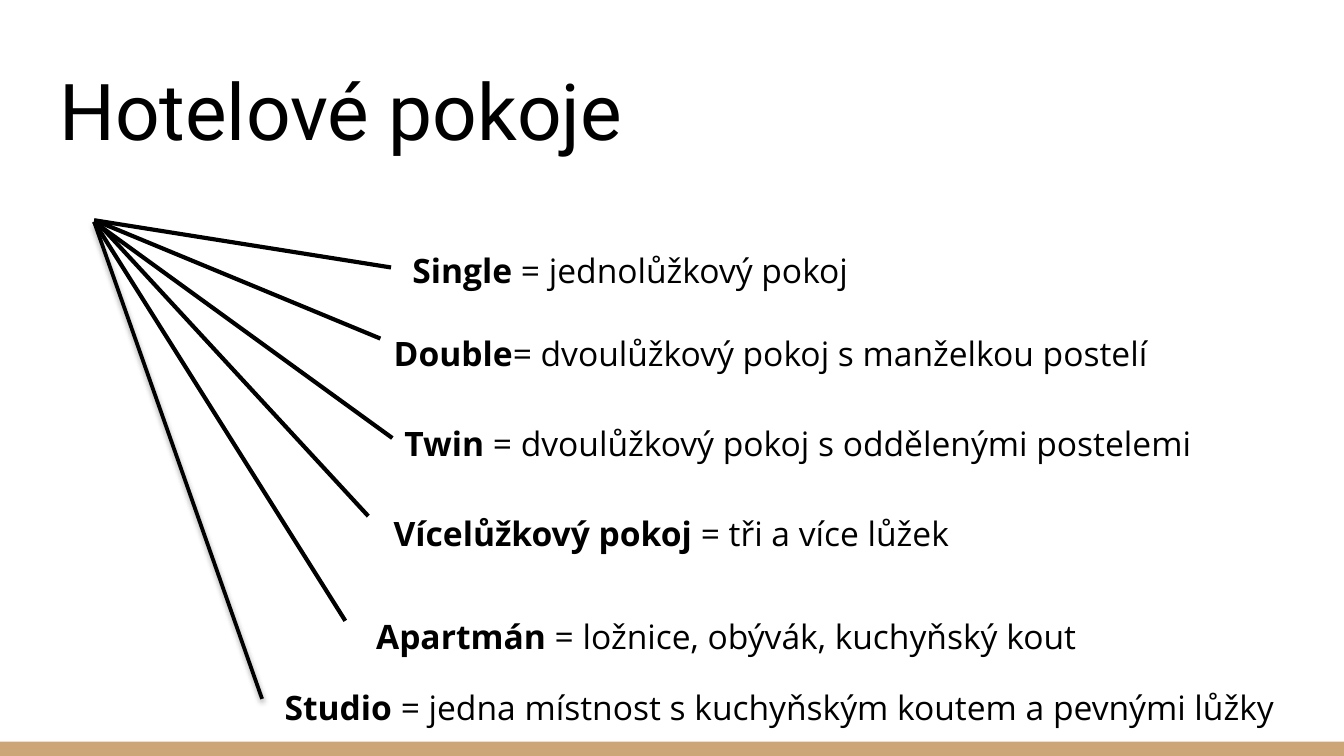
"""Build a slide that fans out from one point to the types of hotel rooms."""
from lxml.etree import SubElement
from pptx import Presentation
from pptx.dml.color import RGBColor
from pptx.enum.shapes import MSO_CONNECTOR, MSO_SHAPE
from pptx.enum.text import MSO_ANCHOR, MSO_AUTO_SIZE, PP_ALIGN
from pptx.oxml.ns import qn
from pptx.util import Pt


def rgb(value):
    return RGBColor.from_string(value)


class RoomSlide:
    INK = "000000"
    SAND = "CCA677"
    TITLE_FONT = "Roboto"
    BODY_FONT = "Open Sans"
    INSET = 7.2

    def __init__(self, prs):
        self.s = prs.slides.add_slide(prs.slide_layouts[5])
        fill = self.s.background.fill
        fill.solid()
        fill.fore_color.rgb = rgb("FFFFFF")

    def place(self, sp, left, top, width, height):
        sp.left, sp.top = Pt(left), Pt(top)
        sp.width, sp.height = Pt(width), Pt(height)

    def frame(self, sp, inset_y=INSET):
        tf = sp.text_frame
        tf.word_wrap = True
        tf.auto_size = MSO_AUTO_SIZE.NONE
        tf.margin_left = tf.margin_right = Pt(self.INSET)
        tf.margin_top = tf.margin_bottom = Pt(inset_y)
        return tf

    def run(self, p, text, font, size, bold=False):
        r = p.add_run()
        r.text = text
        r.font.name = font
        r.font.size = Pt(size)
        r.font.bold = bold
        r.font.color.rgb = rgb(self.INK)

    def bar(self, left, top, width, height):
        sp = self.s.shapes.add_shape(
            MSO_SHAPE.RECTANGLE, Pt(left), Pt(top), Pt(width), Pt(height))
        sp.shadow.inherit = False
        sp.fill.solid()
        sp.fill.fore_color.rgb = rgb(self.SAND)
        sp.line.fill.background()

    def title(self, text, *box):
        sp = self.s.shapes.title
        self.place(sp, *box)
        tf = self.frame(sp)
        tf.vertical_anchor = MSO_ANCHOR.BOTTOM
        p = tf.paragraphs[0]
        p.alignment = PP_ALIGN.LEFT
        self.run(p, text, self.TITLE_FONT, 42)

    def ray(self, start, end, weight=2.25, shadow=False):
        sp = self.s.shapes.add_connector(
            MSO_CONNECTOR.STRAIGHT, *(Pt(v) for v in (*start, *end)))
        sp.line.color.rgb = rgb(self.INK)
        sp.line.width = Pt(weight)
        effects = SubElement(sp._element.spPr, qn("a:effectLst"))
        if shadow:
            outer = SubElement(
                effects, qn("a:outerShdw"), blurRad=str(Pt(3.1)),
                dist=str(Pt(1.6)), dir="5400000", rotWithShape="0")
            color = SubElement(outer, qn("a:srgbClr"), val=self.INK)
            SubElement(color, qn("a:alpha"), val="38000")

    def room(self, name, meaning, box, inset_y=INSET, spacing=None):
        sp = self.s.shapes.add_textbox(*(Pt(v) for v in box))
        p = self.frame(sp, inset_y).paragraphs[0]
        p.line_spacing = spacing
        self.run(p, name, self.BODY_FONT, 18, True)
        self.run(p, meaning, self.BODY_FONT, 18)


ROOMS = [
    ("Single ", "= jednolůžkový pokoj",
     (50.4, 118), (209.5, 143.3), (213.8, 126.7, 349.2, 71.3), {}, {}),
    ("Double", "= dvoulůžkový pokoj s manželkou postelí",
     (52.6, 118.8), (203.8, 181.4), (203.8, 167.8, 502.6, 51.8), {}, {"spacing": 1.15}),
    ("Twin", " = dvoulůžkový pokoj s oddělenými postelemi",
     (50.4, 118.8), (210.2, 234.7), (209.5, 219.6, 502.6, 58.3), {}, {}),
    ("Vícelůžkový pokoj", " = tři a více lůžek",
     (51.8, 118.8), (197.3, 276.5), (203.8, 267.8, 478.8, 39.6), {}, {}),
    ("Apartmán", " = ložnice, obývák, kuchyňský kout",
     (50.4, 118.8), (185, 332.6), (194.4, 322.6, 421.2, 58.3), {}, {}),
    ("Studio ", "= jedna místnost s kuchyňským koutem a pevnými lůžky",
     (50.4, 118.8), (140.4, 374.4), (145.4, 364.3, 550.1, 28.8),
     {"weight": 2, "shadow": True}, {"inset_y": 3.6}),
]


def main():
    prs = Presentation()
    prs.slide_width, prs.slide_height = Pt(720), Pt(405)
    slide = RoomSlide(prs)
    slide.bar(0, 397.4, 720, 7.6)
    slide.title("Hotelové pokoje", 24.5, 25.2, 671, 65.5)
    for name, meaning, start, end, box, ray_style, text_style in ROOMS:
        slide.ray(start, end, **ray_style)
        slide.room(name, meaning, box, **text_style)
    prs.save("out.pptx")


if __name__ == "__main__":
    main()
